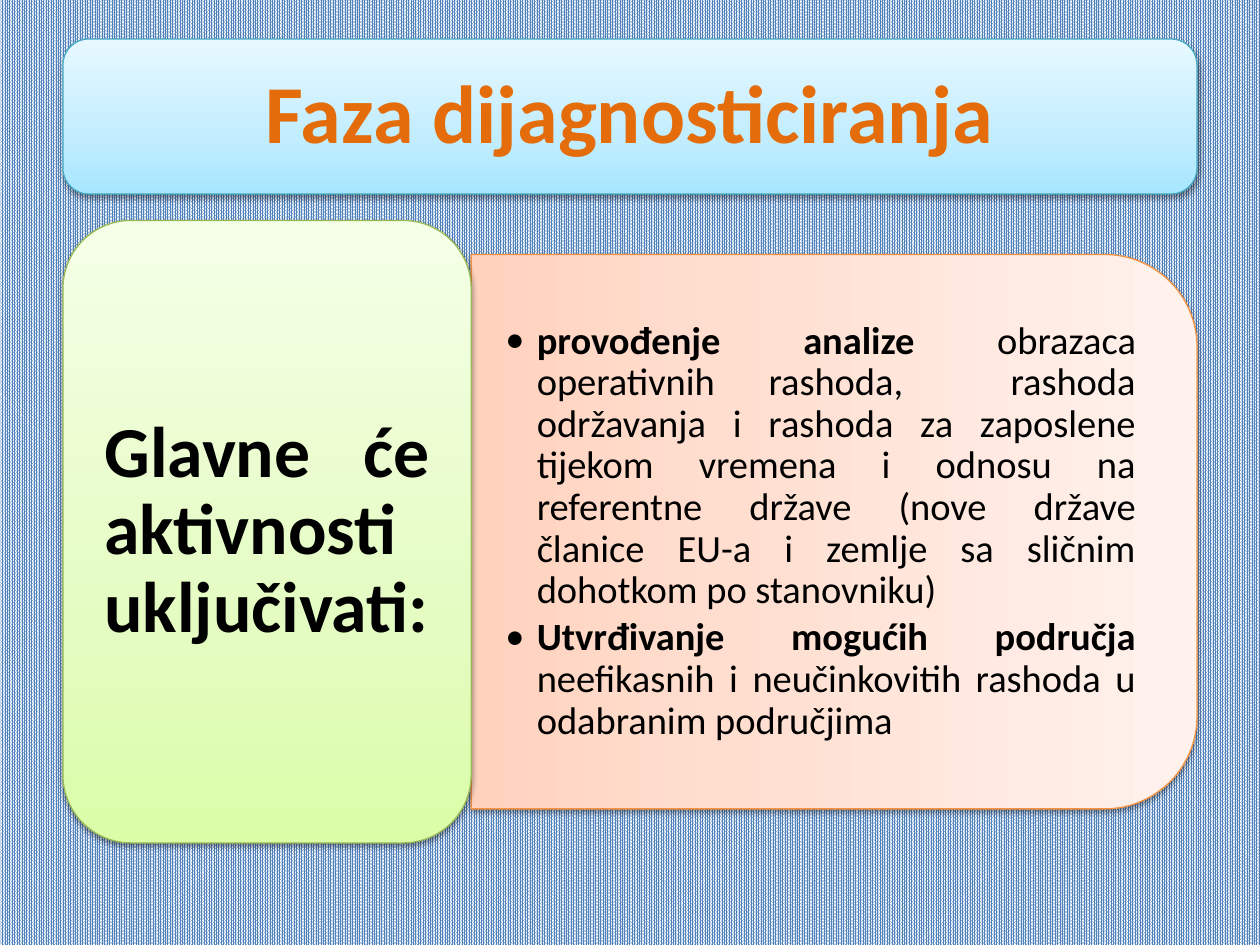
from lxml import etree
from pptx import Presentation
from pptx.dml.color import RGBColor
from pptx.enum.dml import MSO_PATTERN
from pptx.enum.shapes import MSO_SHAPE as SHAPE
from pptx.enum.text import MSO_ANCHOR as ANCHOR, MSO_AUTO_SIZE as AUTO, PP_ALIGN as ALIGN
from pptx.oxml import parse_xml
from pptx.oxml.ns import nsdecls, qn
from pptx.util import Inches, Pt

CORNER = 0.0488  # text inset of a rounded corner, as a share of the short side
BLUE = ("A7E6FF", "C1EDFF", "E7F8FF")
GREEN = ("DAFDA7", "E4FCC2", "F5FFE7")
ORANGE = ("FFD2BD", "FFDED0", "FFF2ED")
ACTIVITIES = [
    ("provođenje analize ",
     "obrazaca operativnih rashoda,  rashoda održavanja i rashoda za zaposlene "
     "tijekom vremena i odnosu na referentne države (nove države članice EU-a "
     "i zemlje sa sličnim dohotkom po stanovniku)"),
    ("Utvrđivanje mogućih područja ",
     "neefikasnih i neučinkovitih rashoda u odabranim područjima"),
]


def color(value):
    return RGBColor.from_string(value)


def place(sp, x, y, w, h):
    sp.left, sp.top, sp.width, sp.height = map(Inches, (x, y, w, h))


def add_panel(slide, kind, box, tones, line, rotation=0):
    """Add a gradient panel with a soft shadow; box is where it shows after a quarter turn."""
    x, y, w, h = box
    if rotation:
        x, y, w, h = x + (w - h) / 2, y + (h - w) / 2, h, w
    sp = slide.shapes.add_shape(kind, *map(Inches, (x, y, w, h)))
    sp.rotation = rotation
    stops = "".join(f'<a:gs pos="{pos}000"><a:srgbClr val="{tone}"/></a:gs>'
                    for pos, tone in zip((0, 35, 100), tones))
    props = sp._element.spPr
    props.append(parse_xml(
        f'<a:gradFill {nsdecls("a")} rotWithShape="1"><a:gsLst>{stops}</a:gsLst>'
        '<a:lin ang="16200000" scaled="0"/></a:gradFill>'))
    sp.line.color.rgb = color(line)
    sp.line.width = Pt(0.75)
    props.append(parse_xml(
        f'<a:effectLst {nsdecls("a")}><a:outerShdw blurRad="{Pt(3.1)}" dist="{Pt(1.6)}" '
        'dir="5400000" rotWithShape="0"><a:srgbClr val="000000"><a:alpha val="38000"/>'
        '</a:srgbClr></a:outerShdw></a:effectLst>'))


def inner_box(x, y, w, h):
    gap = CORNER * min(w, h)
    return x + gap, y + gap, w - 2 * gap, h - 2 * gap


def set_frame(tf, side, ends):
    tf.word_wrap = True
    tf.auto_size = AUTO.NONE
    tf.vertical_anchor = ANCHOR.MIDDLE
    tf.margin_left = tf.margin_right = Inches(side)
    tf.margin_top = tf.margin_bottom = Inches(ends)


def format_paragraph(p, size, tint="000000", align=ALIGN.JUSTIFY):
    p.alignment = align
    p.line_spacing = 0.9
    for r in p.runs:
        r.font.name = "Calibri"
        r.font.size = Pt(size)
        r.font.color.rgb = color(tint)


def add_bullet(p):
    props = p._p.get_or_add_pPr()
    props.set("marL", str(Inches(0.25)))
    props.set("indent", str(-Inches(0.25)))
    etree.SubElement(props, qn("a:buFont")).set("typeface", "Calibri")
    etree.SubElement(props, qn("a:buChar")).set("char", "•")


def add_title(slide, box):
    add_panel(slide, SHAPE.ROUNDED_RECTANGLE, box, BLUE, "46AAC5")
    title = slide.shapes.title
    slide.shapes._spTree.append(title._element)  # bring in front of its panel
    place(title, *inner_box(*box))
    tf = title.text_frame
    set_frame(tf, 0.2, 0.2)
    tf.text = "Faza dijagnosticiranja"
    format_paragraph(tf.paragraphs[0], 47, "E46C0A", ALIGN.CENTER)
    tf.paragraphs[0].runs[0].font.bold = True


def add_activities(slide, box):
    x, y, w, h = box
    add_panel(slide, SHAPE.ROUND_2_SAME_RECTANGLE, box, ORANGE, "F69240", 90)
    gap = CORNER * h
    tb = slide.shapes.add_textbox(0, 0, 0, 0)
    place(tb, x, y + gap, w - gap, h - 2 * gap)
    tf = tb.text_frame
    set_frame(tf, 0.27, 0.14)
    for i, (lead, rest) in enumerate(ACTIVITIES):
        p = tf.add_paragraph() if i else tf.paragraphs[0]
        for text, bold in ((lead, True), (rest, False)):
            r = p.add_run()
            r.text = text
            r.font.bold = bold
        format_paragraph(p, 22)
        p.space_after = Pt(3.3)
        add_bullet(p)


def add_heading(slide, box):
    add_panel(slide, SHAPE.ROUNDED_RECTANGLE, box, GREEN, "98B955")
    tb = slide.shapes.add_textbox(0, 0, 0, 0)
    place(tb, *inner_box(*box))
    tf = tb.text_frame
    set_frame(tf, 0.17, 0.09)
    tf.text = "Glavne će aktivnosti uključivati:"
    format_paragraph(tf.paragraphs[0], 41)
    tf.paragraphs[0].runs[0].font.bold = True


def main():
    prs = Presentation()
    prs.slide_width, prs.slide_height = Inches(10), Inches(7.5)
    slide = prs.slides.add_slide(prs.slide_layouts[5])
    fill = slide.background.fill
    fill.patterned()
    fill.pattern = MSO_PATTERN.PERCENT_90
    fill.fore_color.rgb = color("4F81BD")
    fill.back_color.rgb = color("FFFFFF")

    add_title(slide, (0.5, 0.31, 9, 1.23))
    add_activities(slide, (3.74, 2.02, 5.76, 4.4))
    add_heading(slide, (0.5, 1.75, 3.24, 4.94))
    prs.save("out.pptx")


if __name__ == "__main__":
    main()
